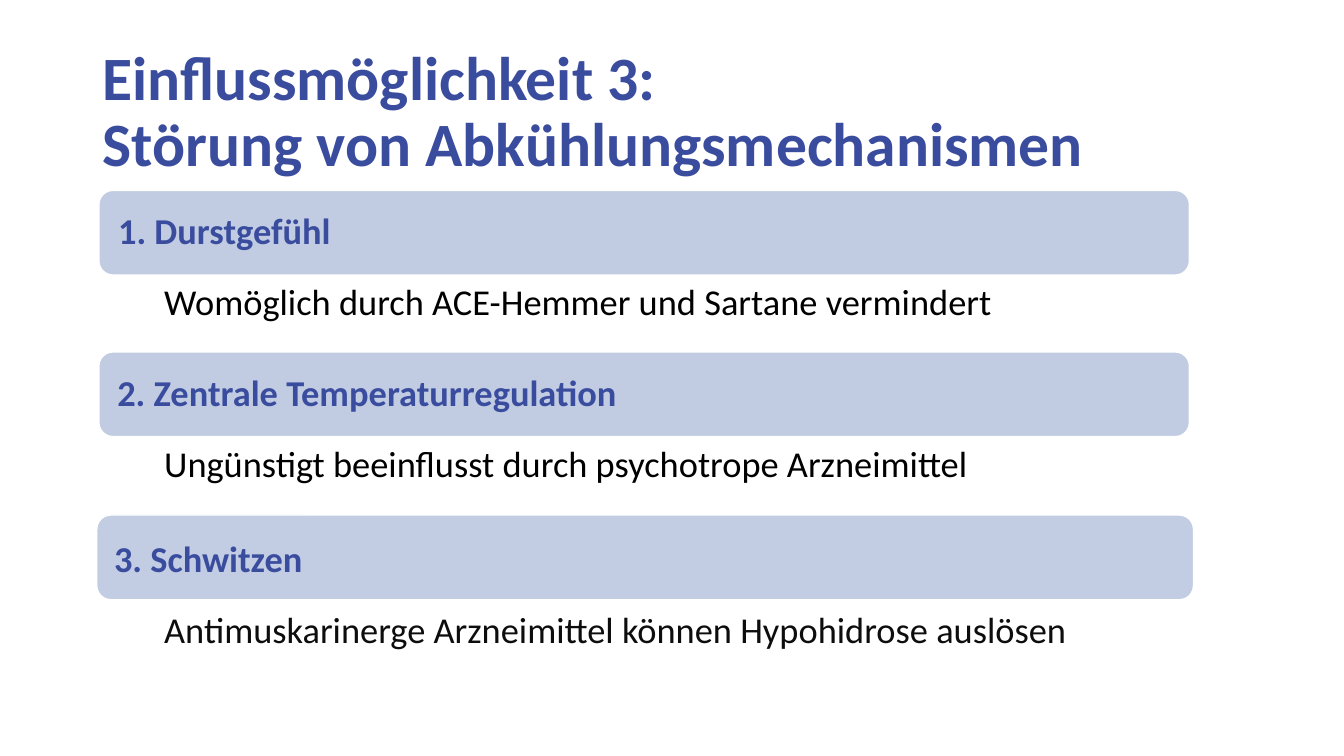
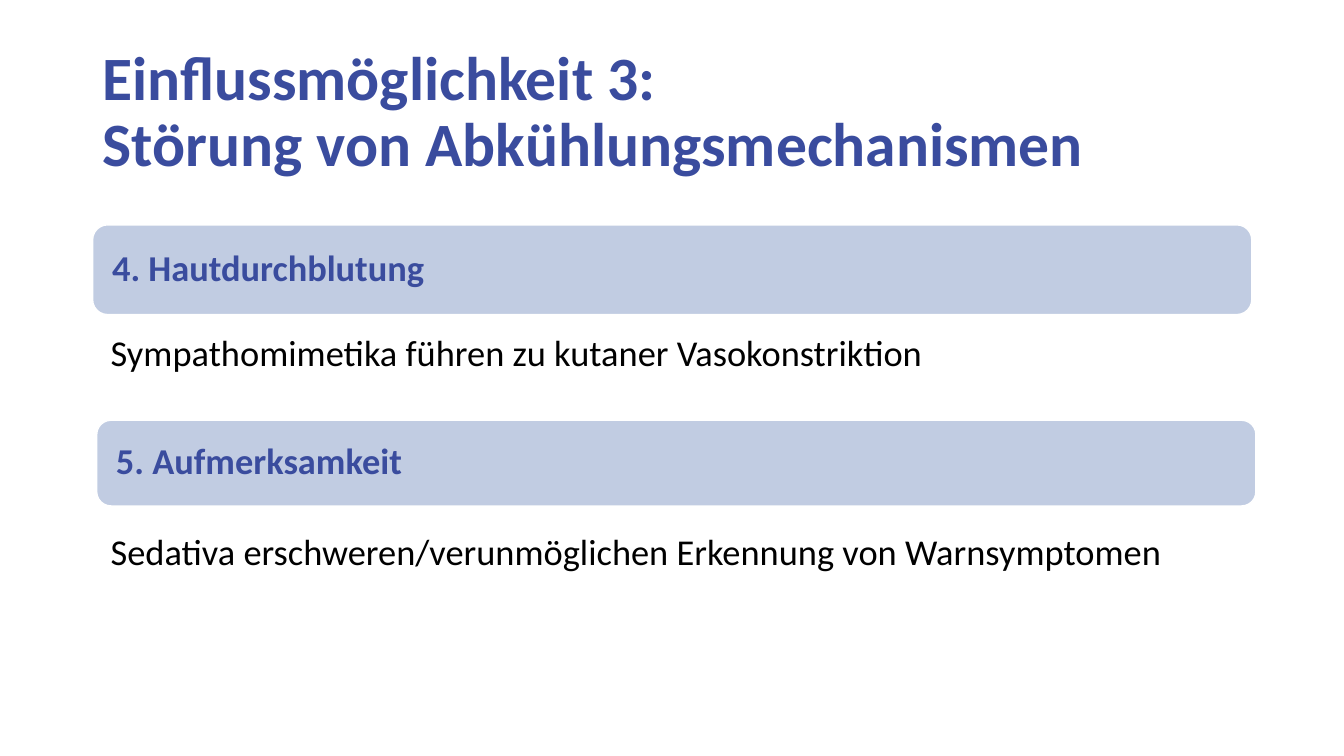
"""Build two slides on how medicines disturb the cooling mechanisms of the body."""
import dataclasses
from typing import Any

import pptx
import pptx.dml.color
import pptx.enum.shapes
import pptx.enum.text
import pptx.oxml
import pptx.oxml.ns
import pptx.util

Pt = pptx.util.Pt
PP = pptx.enum.text.PP_ALIGN
ANCHOR = pptx.enum.text.MSO_ANCHOR
AUTO = pptx.enum.text.MSO_AUTO_SIZE

BLUE, BAND, BLACK, SOFT_BLACK, WHITE = "3A4C9E", "4465A8", "000000", "0D0D0D", "FFFFFF"
TITLE_LINES = ("Einflussmöglichkeit 3:", "Störung von Abkühlungsmechanismen")
TITLE_FONT = {"name": "Calibri", "size": Pt(44), "bold": True}
HEAD_FONT = {"name": "Calibri", "size": Pt(26), "bold": True}
NOTE_FONT = {"name": "Calibri", "size": Pt(26), "bold": False}
TIGHT = {"alignment": PP.LEFT, "line_spacing": 0.9}
TITLE_BOX = {"left": Pt(66.2), "top": Pt(28.8), "width": Pt(828), "height": Pt(104.4)}


@dataclasses.dataclass(frozen=True)
class Topic:
    """A heading band with the sentence below it; lengths in points."""

    head: str
    note: str
    left: float
    top: float
    width: float
    height: float
    note_left: float
    note_top: float
    note_width: float
    inset: float = 10.8
    drop: float = 0
    opacity: int = 33
    note_color: str = BLACK


SLIDES = (
    (
        Topic("1. Durstgefühl", "Womöglich durch ACE-Hemmer und Sartane vermindert",
              70.6, 136, 779, 60.5, 110.2, 195.8, 682.6),
        Topic("2. Zentrale Temperaturregulation",
              "Ungünstigt beeinflusst durch psychotrope Arzneimittel",
              70.6, 251.4, 779, 60.5, 110.2, 311.8, 736.6, inset=10.2),
        Topic("3. Schwitzen", "Antimuskarinerge Arzneimittel können Hypohidrose auslösen",
              69.1, 367.9, 783.4, 60.5, 110.2, 429.8, 660.2,
              inset=9.4, drop=4.4, opacity=32, note_color=SOFT_BLACK),
    ),
    (
        Topic("4. Hautdurchblutung", "Sympathomimetika führen zu kutaner Vasokonstriktion",
              66.2, 160.6, 828, 64.1, 72, 232.6, 702),
        Topic("5. Aufmerksamkeit",
              "Sedativa erschweren/verunmöglichen Erkennung von Warnsymptomen",
              69.1, 300.2, 828, 61.2, 72, 374.4, 794.2),
    ),
)


def rgb(color: str) -> Any:
    """Turn a hex string into a colour."""
    return pptx.dml.color.RGBColor.from_string(color)


def apply(target: Any, values: dict[str, Any]) -> None:
    """Set each named value on the target."""
    for name, value in values.items():
        setattr(target, name, value)


def write(p: Any, text: str, font: dict[str, Any], color: str) -> None:
    """Add a formatted run to a paragraph."""
    r = p.add_run()
    r.text = text
    apply(r.font, font)
    r.font.color.rgb = rgb(color)


def add_title(s: Any) -> None:
    """Place and fill the title placeholder."""
    sp = s.shapes.title
    apply(sp, TITLE_BOX)
    apply(sp.text_frame, {"vertical_anchor": ANCHOR.MIDDLE, "word_wrap": True,
                          "auto_size": AUTO.NONE})
    p = sp.text_frame.paragraphs[0]
    apply(p, TIGHT)
    for i, line in enumerate(TITLE_LINES):
        if i:
            p.add_line_break()
        write(p, line, TITLE_FONT, BLUE)


def add_band(s: Any, topic: Topic) -> None:
    """Draw the translucent rounded band with its heading."""
    sp = s.shapes.add_shape(
        pptx.enum.shapes.MSO_SHAPE.ROUNDED_RECTANGLE,
        Pt(topic.left), Pt(topic.top), Pt(topic.width), Pt(topic.height))
    sp.shadow.inherit = False
    sp.fill.solid()
    sp.fill.fore_color.rgb = rgb(BAND)
    qn = pptx.oxml.ns.qn
    clr = sp.element.spPr.find(qn("a:solidFill")).find(qn("a:srgbClr"))
    alpha = pptx.oxml.parse_xml(
        f'<a:alpha {pptx.oxml.ns.nsdecls("a")} val="{topic.opacity * 1000}"/>')
    clr.append(alpha)
    sp.line.color.rgb = rgb(WHITE)
    sp.line.width = Pt(1)
    apply(sp.text_frame, {
        "word_wrap": True, "vertical_anchor": ANCHOR.MIDDLE,
        "margin_left": Pt(topic.inset), "margin_right": Pt(topic.inset),
        "margin_top": Pt(topic.drop), "margin_bottom": Pt(0)})
    p = sp.text_frame.paragraphs[0]
    apply(p, TIGHT)
    write(p, topic.head, HEAD_FONT, BLUE)


def add_note(s: Any, topic: Topic) -> None:
    """Write the sentence below the band."""
    sp = s.shapes.add_textbox(
        Pt(topic.note_left), Pt(topic.note_top), Pt(topic.note_width), Pt(38.9))
    apply(sp.text_frame, {"word_wrap": True, "auto_size": AUTO.SHAPE_TO_FIT_TEXT})
    write(sp.text_frame.paragraphs[0], topic.note, NOTE_FONT, topic.note_color)


def main() -> None:
    """Build and save the presentation."""
    prs = pptx.Presentation()
    apply(prs, {"slide_width": Pt(960), "slide_height": Pt(540)})
    for topics in SLIDES:
        s = prs.slides.add_slide(prs.slide_layouts.get_by_name("Title Only"))
        add_title(s)
        for topic in topics:
            add_band(s, topic)
            add_note(s, topic)
    prs.save("out.pptx")


if __name__ == "__main__":
    main()
